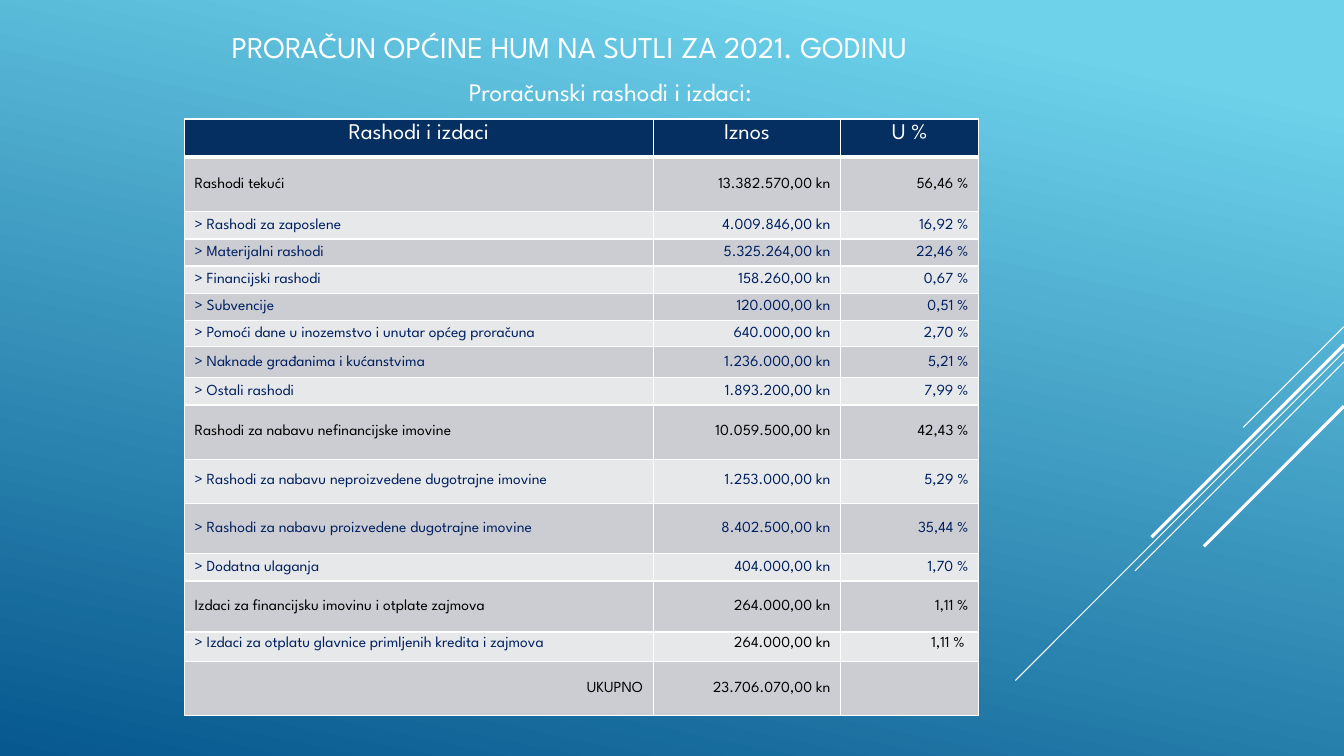
from dataclasses import dataclass

from lxml import etree
from pptx import Presentation
from pptx.dml.color import RGBColor
from pptx.enum.shapes import MSO_CONNECTOR
from pptx.enum.text import MSO_ANCHOR, MSO_AUTO_SIZE, PP_ALIGN
from pptx.oxml.ns import qn
from pptx.util import Pt

LEFT, CENTER, RIGHT = PP_ALIGN.LEFT, PP_ALIGN.CENTER, PP_ALIGN.RIGHT
TOP, MIDDLE, BOTTOM = MSO_ANCHOR.TOP, MSO_ANCHOR.MIDDLE, MSO_ANCHOR.BOTTOM
NO_AUTOFIT = MSO_AUTO_SIZE.NONE
STRAIGHT = MSO_CONNECTOR.STRAIGHT


@dataclass(frozen=True)
class Theme:
    font: str = "League Spartan"
    sky: str = "6ED2EB"
    deep: str = "06588E"
    white: str = "FFFFFF"
    black: str = "000000"
    navy: str = "002060"
    header: str = "052F61"
    bands: tuple = ("E7E8EA", "CCCDD2")
    title_size: float = 21.6
    subtitle_size: float = 18
    header_size: float = 16
    cell_size: float = 11


class SlideBuilder:
    def __init__(self, slide, theme):
        self.s, self.theme = slide, theme

    def background(self, angle, stops):
        fill = self.s.background.fill
        fill.gradient()
        fill.gradient_angle = angle
        for stop, (position, color) in zip(fill.gradient_stops, stops):
            stop.position = position
            stop.color.rgb = RGBColor.from_string(color)

    def text(self, tf, text, size, color, align):
        p = tf.paragraphs[0]
        p.alignment = align
        r = p.add_run()
        r.text = text
        formats = {"name": self.theme.font, "size": Pt(size), "bold": False}
        for name, value in formats.items():
            setattr(r.font, name, value)
        r.font.color.rgb = RGBColor.from_string(color)
        return p

    def placeholder(self, sp, box, text, size, align, anchor):
        for name, value in zip(("left", "top", "width", "height"), box):
            setattr(sp, name, Pt(value))
        tf = sp.text_frame
        formats = {"auto_size": NO_AUTOFIT, "word_wrap": True, "vertical_anchor": anchor}
        for name, value in formats.items():
            setattr(tf, name, value)
        p = self.text(tf, text, size, self.theme.white, align)
        p.space_before = Pt(0)
        pPr = p._p.get_or_add_pPr()
        pPr.set("marL", "0")
        pPr.set("indent", "0")
        etree.SubElement(pPr, qn("a:buNone"))

    def line(self, start, end, width):
        sp = self.s.shapes.add_connector(STRAIGHT, *map(Pt, start + end))
        sp.line.width = Pt(width)
        sp.line.color.rgb = RGBColor.from_string(self.theme.white)
        etree.SubElement(sp._element.spPr, qn("a:effectLst"))

    def table(self, left, top, widths, heights):
        table = self.s.shapes.add_table(
            len(heights), len(widths), Pt(left), Pt(top),
            Pt(sum(widths)), Pt(sum(heights))).table
        for column, width in zip(table.columns, widths):
            column.width = Pt(width)
        for row, height in zip(table.rows, heights):
            row.height = Pt(height)
        return table

    def cell(self, cell, text, size, color, align, anchor, fill, top=1, bottom=1):
        cell.vertical_anchor = anchor
        cell.fill.solid()
        cell.fill.fore_color.rgb = RGBColor.from_string(fill)
        if text:
            self.text(cell.text_frame, text, size, color, align)
        # Borders come before the fill in the cell properties
        tcPr = cell._tc.get_or_add_tcPr()
        edges = (("a:lnL", 1), ("a:lnR", 1), ("a:lnT", top), ("a:lnB", bottom))
        for i, (tag, width) in enumerate(edges):
            ln = etree.Element(qn(tag), w=str(Pt(width)))
            solid = etree.SubElement(ln, qn("a:solidFill"))
            etree.SubElement(solid, qn("a:srgbClr"), val=self.theme.white)
            tcPr.insert(i, ln)


HEADINGS = ("Rashodi i izdaci", "Iznos", "U %")
# Row height, item, amount, share
EXPENSES = [
    (38.9, "Rashodi tekući", "13.382.570,00 kn", "56,46 %"),
    (19.4, "> Rashodi za zaposlene", "4.009.846,00 kn", "16,92 %"),
    (19.4, "> Materijalni rashodi", "5.325.264,00 kn", "22,46 %"),
    (19.4, "> Financijski rashodi", "158.260,00 kn", "0,67 %"),
    (19.4, "> Subvencije", "120.000,00 kn", "0,51 %"),
    (18.9, "> Pomoći dane u inozemstvo i unutar općeg proračuna", "640.000,00 kn", "2,70 %"),
    (22.2, "> Naknade građanima i kućanstvima", "1.236.000,00 kn", "5,21 %"),
    (19.4, "> Ostali rashodi", "1.893.200,00 kn", "7,99 %"),
    (38.9, "Rashodi za nabavu nefinancijske imovine", "10.059.500,00 kn", "42,43 %"),
    (31.2, "> Rashodi za nabavu neproizvedene dugotrajne imovine", "1.253.000,00 kn", "5,29 %"),
    (36.2, "> Rashodi za nabavu proizvedene dugotrajne imovine", "8.402.500,00 kn", "35,44 %"),
    (19.4, "> Dodatna ulaganja", "404.000,00 kn", "1,70 %"),
    (36.4, "Izdaci za financijsku imovinu i otplate zajmova", "264.000,00 kn", "1,11 %"),
    (20.9, "> Izdaci za otplatu glavnice primljenih kredita i zajmova", "264.000,00 kn", "1,11 % "),
    (38.9, "UKUPNO", "23.706.070,00 kn", ""),
]
LOAN_ROW = 14
# Start height on the right edge, horizontal run, line width
RAYS = [(233.3, 72, 0.75), (251.3, 234.7, 0.75), (258.5, 149.3, 0.75),
        (246.2, 137.5, 2.25), (290.2, 100.1, 2.25)]


def main():
    theme = Theme()
    prs = Presentation()
    prs.slide_width, prs.slide_height = Pt(960), Pt(540)
    s = prs.slides.add_slide(prs.slide_layouts[1])
    b = SlideBuilder(s, theme)

    # Background and diagonal rays
    b.background(258, [(0.1, theme.sky), (1, theme.deep)])
    for y, run, width in RAYS:
        b.line((960, y), (960 - run, y + run), width)

    # Title and subtitle
    b.placeholder(s.shapes.title, (72.7, 14, 668.2, 38.2),
                  "PRORAČUN OPĆINE HUM NA SUTLI ZA 2021. GODINU",
                  theme.title_size, CENTER, MIDDLE)
    b.placeholder(s.placeholders[1], (177.8, 34.6, 366.5, 45.4),
                  "Proračunski rashodi i izdaci:", theme.subtitle_size, RIGHT, BOTTOM)

    # Budget table
    heights = [27.4] + [row[0] for row in EXPENSES]
    table = b.table(131.8, 85, (334.8, 133.9, 98.6), heights)
    for j, heading in enumerate(HEADINGS):
        b.cell(table.cell(0, j), heading, theme.header_size, theme.white,
               CENTER, TOP, theme.header, bottom=3)
    for i, (_, *texts) in enumerate(EXPENSES, 1):
        item = texts[0]
        for j, text in enumerate(texts):
            detail = item.startswith(">") and (j == 0 or i != LOAN_ROW)
            b.cell(table.cell(i, j), text, theme.cell_size,
                   theme.navy if detail else theme.black,
                   RIGHT if j or item == "UKUPNO" else LEFT,
                   TOP if i == LOAN_ROW else MIDDLE,
                   theme.bands[i % 2], top=3 if i == 1 else 1)

    prs.save("out.pptx")


if __name__ == "__main__":
    main()
